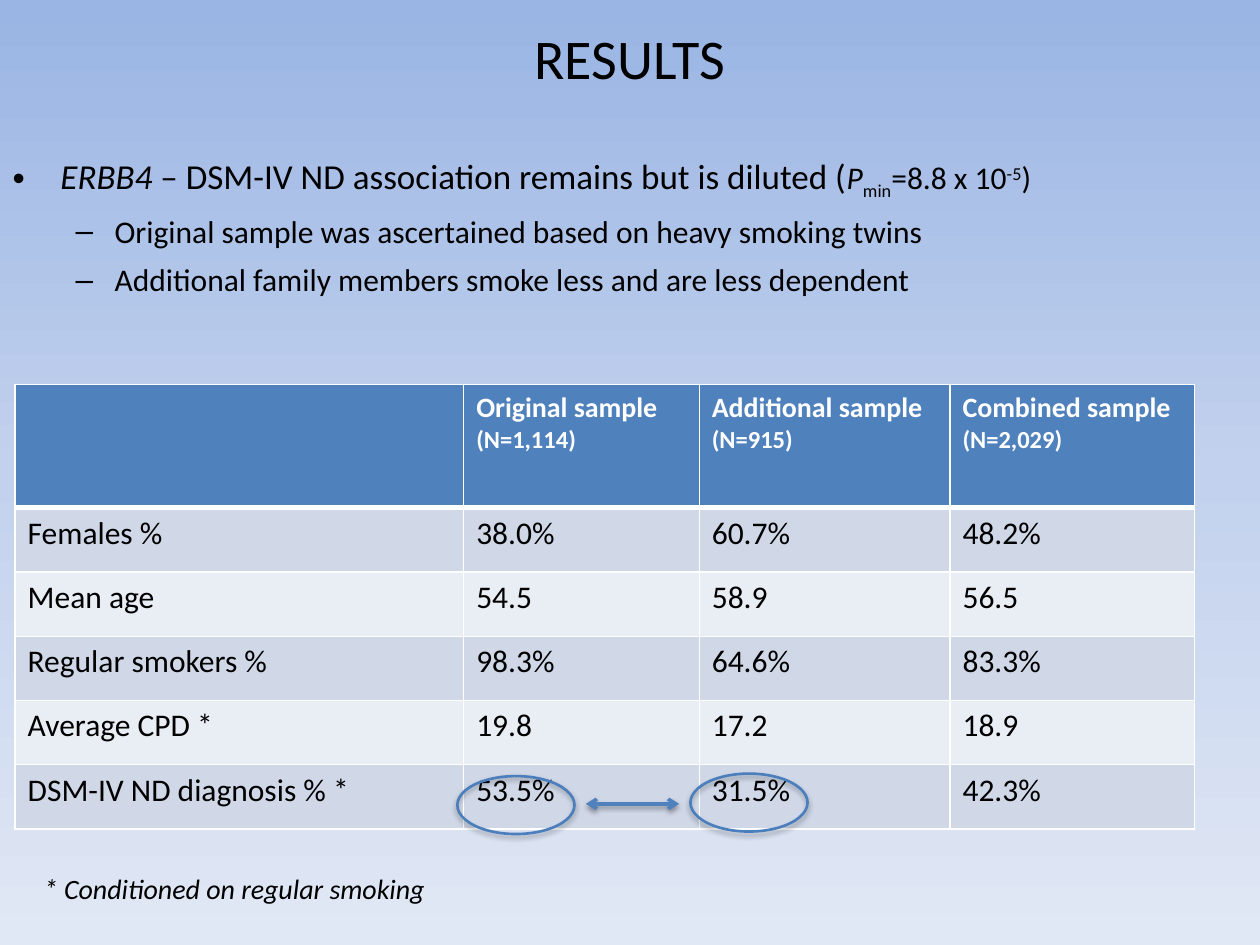
from copy import deepcopy

from lxml import etree
from pptx import Presentation
from pptx.dml.color import RGBColor
from pptx.enum.shapes import MSO_CONNECTOR, MSO_SHAPE
from pptx.enum.text import MSO_ANCHOR, MSO_AUTO_SIZE, PP_ALIGN
from pptx.oxml.ns import qn
from pptx.util import Inches, Pt

FONT = "Calibri"
COLORS = {"text": "000000", "white": "FFFFFF", "header": "4F81BD",
          "odd": "D0D8E8", "even": "E9EDF4", "ring": "4B7EBC"}
BACKGROUND = [(0, "9AB5E4"), (0.5, "C2D1ED"), (1, "E1E8F5")]

# Each run: text, size, italic, baseline shift in percent
BULLETS = [
    (0, [("ERBB4", 20, True, 0),
         (" – DSM-IV ND association remains but is diluted (", 20, False, 0),
         ("P", 18, True, 0), ("min", 18, False, -25),
         ("=8.8 x 10", 18, False, 0), ("-5", 18, False, 30),
         (")", 18, False, 0)]),
    (1, [("Original sample was ascertained based on heavy smoking twins",
          18, False, 0)]),
    (1, [("Additional family members smoke less and are less dependent",
          18, False, 0)]),
]
LEVELS = [(0.38, -0.38, 24), (0.81, -0.31, 6)]  # margin, indent, space before

HEADERS = [("Original sample ", "(N=1,114)"), ("Additional sample ", "(N=915)"),
           ("Combined sample ", "(N=2,029)")]
ROWS = [
    ("Females %", "38.0%", "60.7%", "48.2%"),
    ("Mean age", "54.5", "58.9", "56.5"),
    ("Regular smokers %", "98.3%", "64.6%", "83.3%"),
    ("Average CPD *", "19.8", "17.2", "18.9"),
    ("DSM-IV ND diagnosis % *", "53.5%", "31.5%", "42.3%"),
]
COL_WIDTHS = [3.56, 1.87, 1.99, 1.94]
HEADER_HEIGHT, ROW_HEIGHT = 0.98, 0.51
RINGS = [(3.63, 6.16), (5.48, 6.14)]


def rgb(name):
    return RGBColor.from_string(COLORS[name])


def add_run(p, text, size, color="text", bold=False, italic=False):
    r = p.add_run()
    r.text = text
    font = r.font
    font.name, font.size, font.bold, font.italic = FONT, Pt(size), bold, italic
    font.color.rgb = rgb(color)
    return r


def place(sp, left, top, width, height):
    sp.left, sp.top = Inches(left), Inches(top)
    sp.width, sp.height = Inches(width), Inches(height)


def add_shadow(sp, alpha, distance):
    """Give the shape its own soft shadow, cast straight down."""
    effects = sp._element.spPr.find(qn("a:effectLst"))
    if effects is None:
        effects = etree.SubElement(sp._element.spPr, qn("a:effectLst"))
    shadow = etree.SubElement(effects, qn("a:outerShdw"), blurRad=str(Pt(3.1)),
                              dist=str(Pt(distance)), dir="5400000",
                              rotWithShape="0")
    color = etree.SubElement(shadow, qn("a:srgbClr"), val=COLORS["text"])
    etree.SubElement(color, qn("a:alpha"), val=str(alpha * 1000))


def set_background(s):
    fill = s.background.fill
    fill.gradient()
    fill.gradient_angle = 270
    stop_list = next(s._element.iter(qn("a:gsLst")))
    stop_list.append(deepcopy(stop_list[0]))
    for stop, (position, color) in zip(fill.gradient_stops, BACKGROUND):
        stop.position = position
        stop.color.rgb = RGBColor.from_string(color)


def fill_body(sp):
    place(sp, 0, 1.18, 10, 1.63)
    tf = sp.text_frame
    tf.auto_size = MSO_AUTO_SIZE.NONE
    for i, (level, runs) in enumerate(BULLETS):
        p = tf.paragraphs[0] if i == 0 else tf.add_paragraph()
        margin, indent, before = LEVELS[level]
        p.level, p.space_before = level, Pt(before)
        pPr = p._p.get_or_add_pPr()
        pPr.set("marL", str(Inches(margin)))
        pPr.set("indent", str(Inches(indent)))
        for text, size, italic, shift in runs:
            r = add_run(p, text, size, italic=italic)
            if shift:
                r.font._element.set("baseline", str(shift * 1000))


def style_cell(cell, fill, top=1, bottom=1):
    """Fill the cell and draw white borders of the given widths."""
    tcPr = cell._tc.get_or_add_tcPr()
    for side, width in (("L", 1), ("R", 1), ("T", top), ("B", bottom)):
        ln = etree.SubElement(tcPr, qn(f"a:ln{side}"), w=str(Pt(width)))
        solid = etree.SubElement(ln, qn("a:solidFill"))
        etree.SubElement(solid, qn("a:srgbClr"), val=COLORS["white"])
    cell.fill.solid()
    cell.fill.fore_color.rgb = rgb(fill)


def add_sample_table(s):
    height = HEADER_HEIGHT + ROW_HEIGHT * len(ROWS)
    table = s.shapes.add_table(
        len(ROWS) + 1, len(COL_WIDTHS), Inches(0.12), Inches(3.05),
        Inches(sum(COL_WIDTHS)), Inches(height)).table
    for col, width in zip(table.columns, COL_WIDTHS):
        col.width = Inches(width)
    for i, row in enumerate(table.rows):
        row.height = Inches(ROW_HEIGHT if i else HEADER_HEIGHT)

    for c in range(len(COL_WIDTHS)):
        style_cell(table.cell(0, c), "header", bottom=3)
    for c, (label, count) in enumerate(HEADERS, 1):
        p = table.cell(0, c).text_frame.paragraphs[0]
        add_run(p, label, 16, "white", bold=True)
        add_run(p, count, 14, "white", bold=True)
    for i, values in enumerate(ROWS, 1):
        for c, value in enumerate(values):
            cell = table.cell(i, c)
            style_cell(cell, "odd" if i % 2 else "even", top=3 if i == 1 else 1)
            add_run(cell.text_frame.paragraphs[0], value, 18)


def add_comparison(s):
    for left, top in RINGS:
        ring = s.shapes.add_shape(MSO_SHAPE.OVAL, Inches(left), Inches(top),
                                  Inches(0.93), Inches(0.46))
        ring.fill.background()
        ring.line.color.rgb = rgb("ring")
        ring.line.width = Pt(1.5)
        ring.shadow.inherit = False
        add_shadow(ring, 35, 1.8)
    arrow = s.shapes.add_connector(MSO_CONNECTOR.STRAIGHT, Inches(4.65),
                                   Inches(6.38), Inches(5.39), Inches(6.38))
    arrow.line.color.rgb = rgb("header")
    arrow.line.width = Pt(2)
    ln = arrow.line._get_or_add_ln()
    for end in ("a:headEnd", "a:tailEnd"):
        etree.SubElement(ln, qn(end), type="arrow")
    add_shadow(arrow, 38, 1.6)


def main():
    prs = Presentation()
    prs.slide_width, prs.slide_height = Inches(10), Inches(7.5)
    s = prs.slides.add_slide(prs.slide_layouts[1])
    set_background(s)
    fill_body(s.placeholders[1])
    add_sample_table(s)

    title = s.shapes.title
    place(title, 0, 0, 10, 0.91)
    tf = title.text_frame
    tf.auto_size = MSO_AUTO_SIZE.NONE
    tf.vertical_anchor = MSO_ANCHOR.MIDDLE
    tf.paragraphs[0].alignment = PP_ALIGN.CENTER
    add_run(tf.paragraphs[0], "RESULTS", 32)

    note = s.shapes.add_textbox(Inches(0.25), Inches(6.87), Inches(3.54),
                                Inches(0.37))
    note.text_frame.word_wrap = True
    add_run(note.text_frame.paragraphs[0], "* Conditioned on regular smoking",
            16, italic=True)
    add_comparison(s)
    prs.save("out.pptx")


if __name__ == "__main__":
    main()
